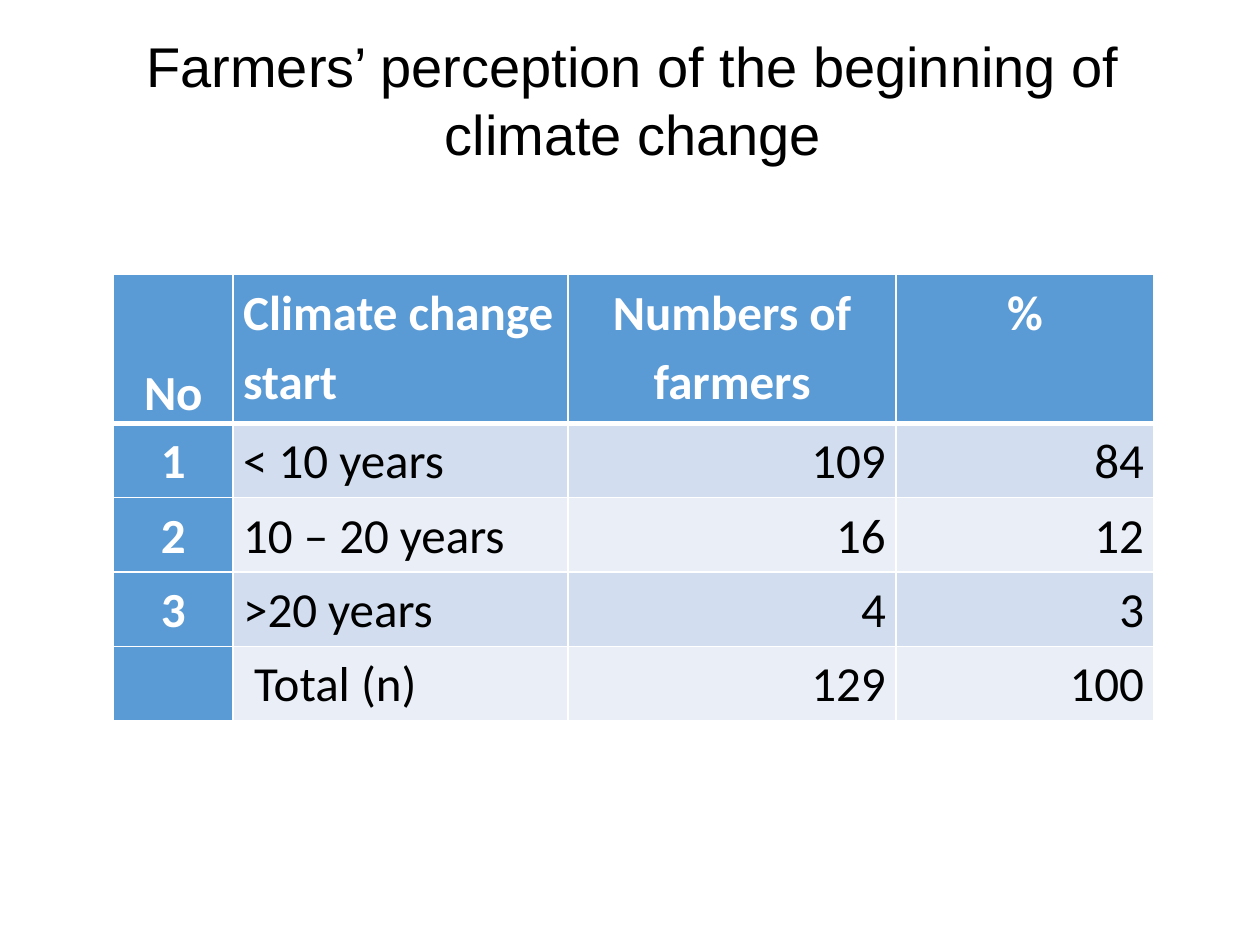
from pptx import Presentation
from pptx.dml.color import RGBColor
from pptx.enum import text
from pptx.oxml import parse_xml
from pptx.oxml.ns import nsdecls
from pptx.util import Inches, Pt

# Content
TITLE = "Farmers’ perception of the beginning of climate change"
ROWS = [
    ("No", "Climate change start", "Numbers of farmers", "%"),
    ("1", "< 10 years", "109", "84"),
    ("2", "10 – 20 years", "16", "12"),
    ("3", ">20 years", "4", "3"),
    ("", " Total (n)", "129", "100"),
]

# Theme and layout
THEME = {
    "title_font": "Arial", "title_size": 32,
    "table_font": "Calibri", "table_size": 28,
    "dark": "000000", "light": "FFFFFF",
    "header": "5B9BD5", "bands": ("D2DEEF", "EAEFF7"),
}
LEFT, WIDTH = 0.9, 8.25
COL_WIDTHS = (0.95, 2.66, 2.6, 2.05)
ROW_HEIGHT = 0.59
ALIGN = text.PP_ALIGN
HEADER_ALIGN = (ALIGN.CENTER, ALIGN.LEFT, ALIGN.CENTER, ALIGN.CENTER)
BODY_ALIGN = (ALIGN.CENTER, ALIGN.JUSTIFY, ALIGN.RIGHT, ALIGN.RIGHT)


def style_run(r, font, size, color, bold=False):
    r.font.name, r.font.size, r.font.bold = font, Pt(size), bold
    r.font.color.rgb = RGBColor.from_string(color)


def set_borders(cell, bottom_width):
    """Give the cell white edges; they must come before its fill."""
    tcPr = cell._tc.get_or_add_tcPr()
    for i, side in enumerate("LRTB"):
        width = Pt(bottom_width if side == "B" else 1)
        tcPr.insert(i, parse_xml(
            f'<a:ln{side} {nsdecls("a")} w="{width}"><a:solidFill>'
            f'<a:srgbClr val="{THEME["light"]}"/></a:solidFill></a:ln{side}>'))


def fill_cell(cell, value, row, col):
    heading = row == 0 or col == 0
    cell.fill.solid()
    cell.fill.fore_color.rgb = RGBColor.from_string(
        THEME["header"] if heading else THEME["bands"][(row - 1) % 2])
    set_borders(cell, 3 if row == 0 else 1)
    cell.margin_left = cell.margin_right = Inches(0.08)
    cell.margin_top = cell.margin_bottom = 0
    if not value:
        return
    cell.text_frame.text = value
    p = cell.text_frame.paragraphs[0]
    p.alignment = (HEADER_ALIGN if row == 0 else BODY_ALIGN)[col]
    p.line_spacing = 1.15
    style_run(p.runs[0], THEME["table_font"], THEME["table_size"],
              THEME["light" if heading else "dark"], heading)


prs = Presentation()
prs.slide_width, prs.slide_height = Inches(10), Inches(7.5)
s = prs.slides.add_slide(prs.slide_layouts[5])

# Title
title = s.shapes.title
title.left, title.top = Inches(LEFT), Inches(0.44)
title.width, title.height = Inches(WIDTH), Inches(0.93)
tf = title.text_frame
tf.text = TITLE
tf.word_wrap = True
tf.auto_size = text.MSO_AUTO_SIZE.NONE
tf.vertical_anchor = text.MSO_ANCHOR.BOTTOM
tf.paragraphs[0].alignment = ALIGN.CENTER
style_run(tf.paragraphs[0].runs[0], THEME["title_font"], THEME["title_size"], THEME["dark"])

# Table: the header is two rows high
table = s.shapes.add_table(
    len(ROWS), len(COL_WIDTHS), Inches(LEFT), Inches(2.18),
    Inches(WIDTH), Inches(ROW_HEIGHT * (len(ROWS) + 1))).table
table.first_col = True
table.horz_banding = True
for column, width in zip(table.columns, COL_WIDTHS):
    column.width = Inches(width)
for i, values in enumerate(ROWS):
    table.rows[i].height = Inches(ROW_HEIGHT * (2 if i == 0 else 1))
    for j, value in enumerate(values):
        fill_cell(table.cell(i, j), value, i, j)
table.cell(0, 0).vertical_anchor = text.MSO_ANCHOR.BOTTOM

prs.save("out.pptx")
